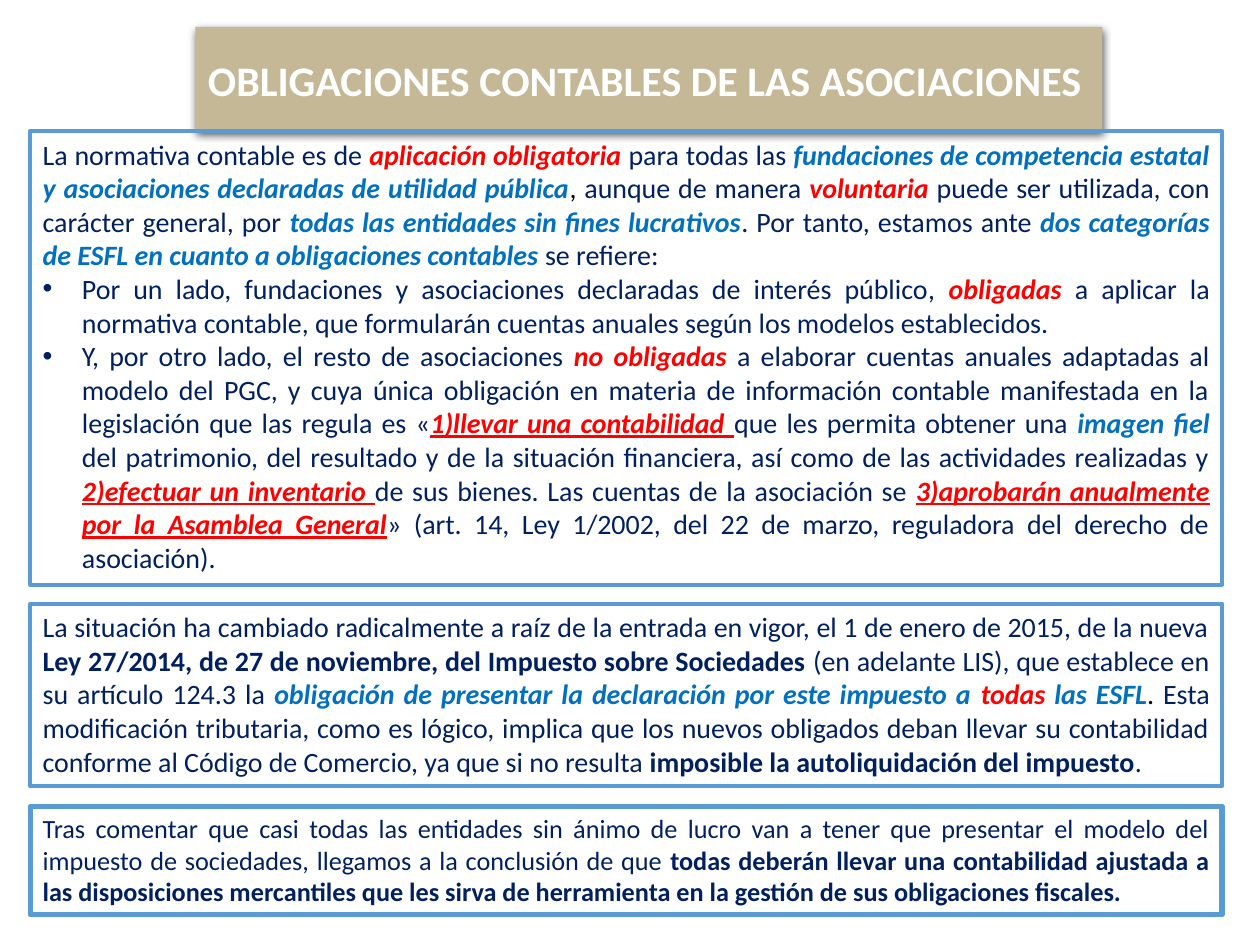
from dataclasses import dataclass

from lxml import etree
from pptx import Presentation
from pptx.dml.color import RGBColor
from pptx.enum import shapes, text
from pptx.oxml import ns
from pptx.util import Pt


@dataclass(frozen=True)
class Theme:
    font: str = "Calibri"
    title_size: float = 24
    body_size: float = 16
    closing_size: float = 15
    navy: str = "002060"
    blue: str = "0070C0"
    red: str = "FF0000"
    black: str = "000000"
    white: str = "FFFFFF"
    sand: str = "C4B896"
    border: str = "5B9BD5"

    def emphasis(self, name):
        return {
            "plain": (self.navy, False, False, False),
            "strong": (self.navy, True, False, False),
            "black": (self.black, False, False, False),
            "italic": (self.navy, False, True, False),
            "key": (self.blue, True, True, False),
            "alert": (self.red, True, True, False),
            "duty": (self.red, True, True, True),
        }[name]


class SlideBuilder:
    def __init__(self, slide, theme):
        self.slide = slide
        self.theme = theme

    def place(self, shape, left, top, width, height):
        shape.left, shape.top = Pt(left), Pt(top)
        shape.width, shape.height = Pt(width), Pt(height)

    def title(self, wording, box):
        heading = self.slide.shapes.title
        self.place(heading, *box)
        heading.fill.solid()
        heading.fill.fore_color.rgb = RGBColor.from_string(self.theme.sand)
        self.cast_shadow(heading)
        frame = heading.text_frame
        frame.text = wording
        frame.word_wrap = False
        frame.auto_size = text.MSO_AUTO_SIZE.SHAPE_TO_FIT_TEXT
        line = frame.paragraphs[0]
        line.alignment = text.PP_ALIGN.LEFT
        line.font.name = self.theme.font
        line.font.size = Pt(self.theme.title_size)
        line.font.bold = True
        line.font.color.rgb = RGBColor.from_string(self.theme.white)

    def cast_shadow(self, shape):
        shape.shadow.inherit = False
        effects = shape.element.spPr.find(ns.qn("a:effectLst"))
        shadow = etree.SubElement(
            effects, ns.qn("a:outerShdw"), blurRad=str(Pt(4.5)),
            dist=str(Pt(1.5)), dir="5400000", rotWithShape="0")
        color = etree.SubElement(shadow, ns.qn("a:srgbClr"), val=self.theme.black)
        etree.SubElement(color, ns.qn("a:alpha"), val="63000")

    def panel(self, paragraphs, box, size, border_width):
        panel = self.slide.shapes.add_shape(
            shapes.MSO_SHAPE.RECTANGLE, *map(Pt, box))
        panel.shadow.inherit = False
        panel.fill.background()
        panel.line.color.rgb = RGBColor.from_string(self.theme.border)
        panel.line.width = Pt(border_width)
        frame = panel.text_frame
        frame.word_wrap = True
        frame.auto_size = text.MSO_AUTO_SIZE.SHAPE_TO_FIT_TEXT
        frame.vertical_anchor = text.MSO_ANCHOR.TOP
        for index, (bulleted, passages) in enumerate(paragraphs):
            paragraph = frame.add_paragraph() if index else frame.paragraphs[0]
            paragraph.alignment = text.PP_ALIGN.JUSTIFY
            if bulleted:
                self.bullet(paragraph)
            paragraph.font.name = self.theme.font
            paragraph.font.size = Pt(size)
            for emphasis, wording in passages:
                self.passage(paragraph, emphasis, wording)

    def bullet(self, paragraph):
        properties = paragraph._p.get_or_add_pPr()
        properties.set("marL", str(Pt(22.5)))
        properties.set("indent", str(-Pt(22.5)))
        etree.SubElement(properties, ns.qn("a:buFont"), typeface="Arial")
        etree.SubElement(properties, ns.qn("a:buChar"), char="•")

    def passage(self, paragraph, emphasis, wording):
        run = paragraph.add_run()
        run.text = wording
        color, bold, italic, underline = self.theme.emphasis(emphasis)
        run.font.color.rgb = RGBColor.from_string(color)
        run.font.bold = bold
        run.font.italic = italic
        run.font.underline = underline


RULES = [
    (False, [
        ("plain", "La normativa contable es de "),
        ("alert", "aplicación obligatoria "),
        ("plain", "para todas las "),
        ("key", "fundaciones de competencia estatal y asociaciones declaradas de utilidad pública"),
        ("black", ", "),
        ("plain", "aunque de manera "),
        ("alert", "voluntaria "),
        ("plain", "puede ser utilizada, con carácter general, por "),
        ("key", "todas las entidades sin fines lucrativos"),
        ("plain", ". Por tanto, estamos ante "),
        ("key", "dos categorías de ESFL en cuanto a obligaciones contables "),
        ("plain", "se refiere:"),
    ]),
    (True, [
        ("plain", "Por un lado, fundaciones y asociaciones declaradas de interés público"),
        ("italic", ", "),
        ("alert", "obligadas "),
        ("plain", "a aplicar la normativa contable, que formularán cuentas anuales "
                  "según los modelos establecidos. "),
    ]),
    (True, [
        ("plain", "Y, por otro lado, el resto de asociaciones "),
        ("alert", "no obligadas "),
        ("plain", "a elaborar cuentas anuales adaptadas al modelo del PGC, y cuya única "
                  "obligación en materia de información contable manifestada en la "
                  "legislación que las regula es «"),
        ("duty", "1)llevar una contabilidad "),
        ("plain", "que les permita obtener una "),
        ("key", "imagen fiel "),
        ("plain", "del patrimonio, del resultado y de la situación financiera, así como "
                  "de las actividades realizadas y "),
        ("duty", "2)efectuar un inventario "),
        ("plain", "de sus bienes. Las cuentas de la asociación se "),
        ("duty", "3)aprobarán anualmente por la Asamblea General"),
        ("plain", "» (art. 14, Ley 1/2002, del 22 de marzo, reguladora del derecho de asociación)."),
    ]),
]

TAX_CHANGE = [
    (False, [
        ("plain", "La situación ha cambiado radicalmente a raíz de la entrada en vigor, "
                  "el 1 de enero de 2015, de la nueva "),
        ("strong", "Ley 27/2014, de 27 de noviembre, del Impuesto sobre Sociedades"),
        ("plain", " (en adelante LIS), que establece en su artículo 124.3 la "),
        ("key", "obligación de presentar la declaración por este impuesto a "),
        ("alert", "todas"),
        ("key", " las ESFL"),
        ("black", ". "),
        ("plain", "Esta modificación tributaria, como es lógico, implica que los nuevos "
                  "obligados deban llevar su contabilidad conforme al Código de Comercio, "
                  "ya que si no resulta "),
        ("strong", "imposible la autoliquidación del impuesto"),
        ("plain", "."),
    ]),
]

CONCLUSION = [
    (False, [
        ("plain", "Tras comentar que casi todas las entidades sin ánimo de lucro van a tener "
                  "que presentar el modelo del impuesto de sociedades, llegamos a la "
                  "conclusión de que "),
        ("strong", "todas deberán llevar una contabilidad ajustada a las disposiciones "
                   "mercantiles que les sirva de herramienta en la gestión de sus "
                   "obligaciones fiscales."),
    ]),
]


def main():
    deck = Presentation()
    deck.slide_width, deck.slide_height = Pt(720), Pt(540)
    theme = Theme()
    builder = SlideBuilder(deck.slides.add_slide(deck.slide_layouts[5]), theme)
    left, width = 17.3, 681.1
    builder.title("OBLIGACIONES CONTABLES DE LAS ASOCIACIONES", (111.6, 27.4, 518.4, 36))
    for paragraphs, top, height, size, border_width in (
        (RULES, 74.9, 259.2, theme.body_size, 2.25),
        (TAX_CHANGE, 344.9, 104.4, theme.body_size, 2.25),
        (CONCLUSION, 460.8, 61.9, theme.closing_size, 3),
    ):
        builder.panel(paragraphs, (left, top, width, height), size, border_width)
    deck.save("out.pptx")


if __name__ == "__main__":
    main()
